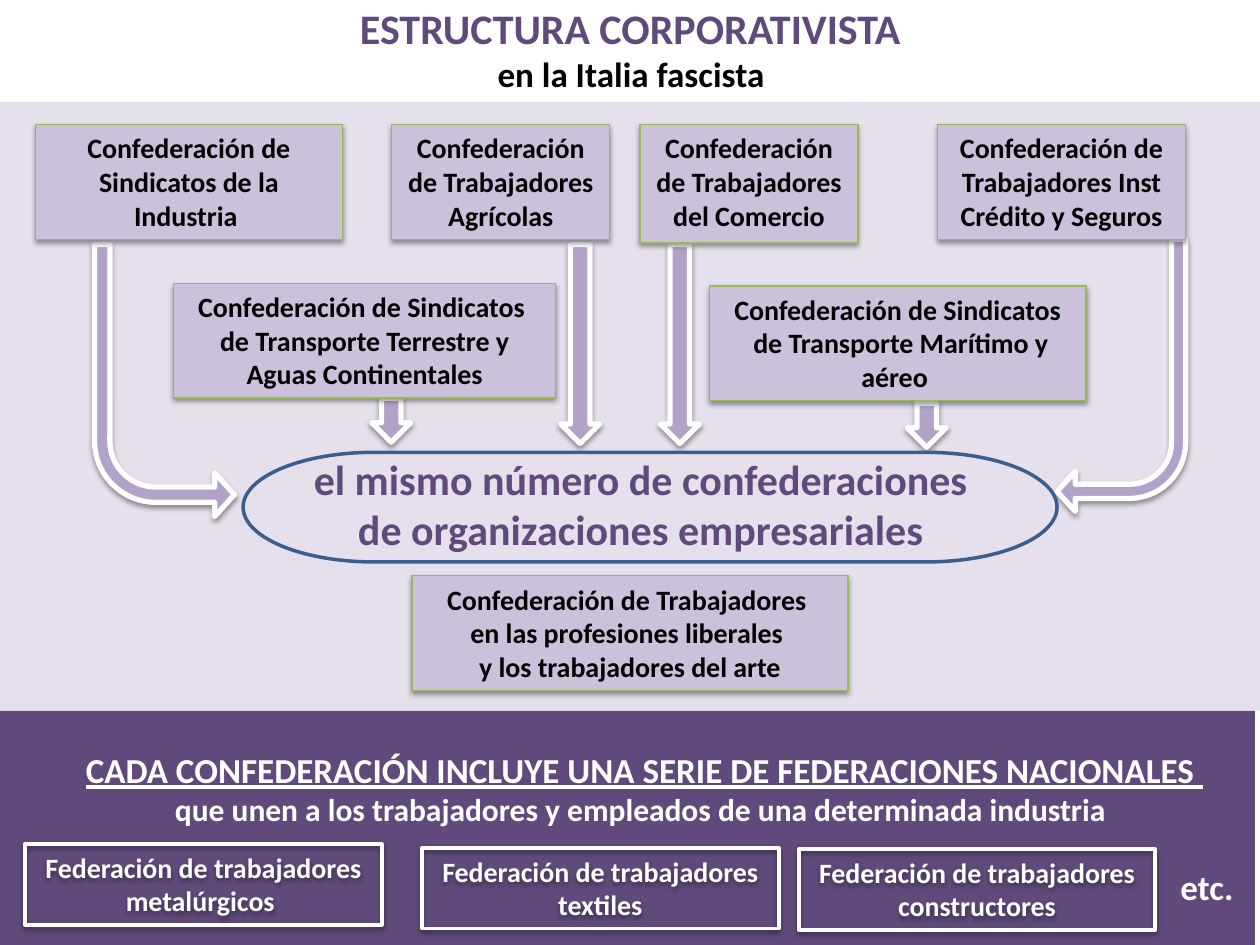
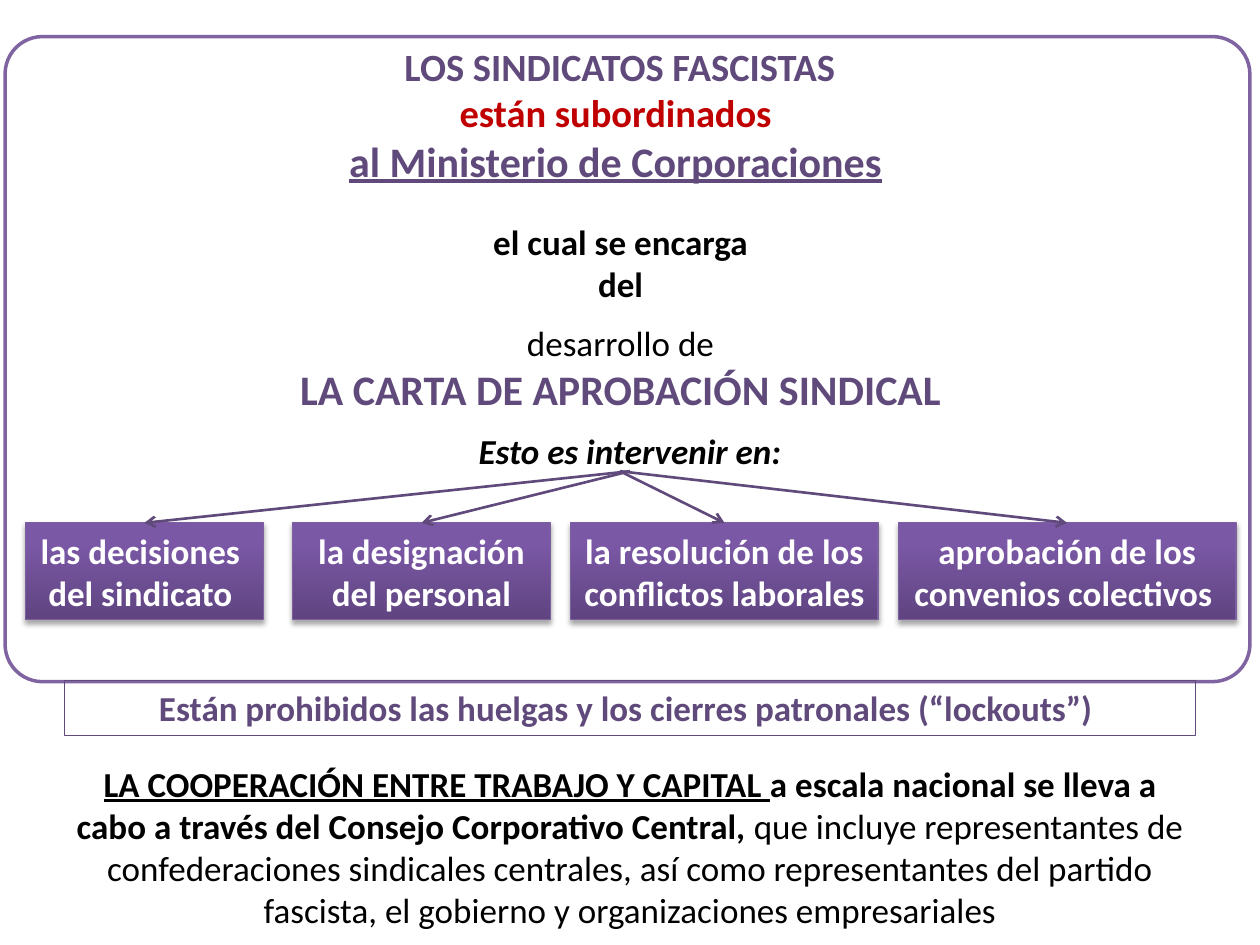
from dataclasses import dataclass
from typing import NamedTuple

from lxml import etree
from pptx import Presentation
from pptx.dml.color import RGBColor
from pptx.enum import shapes, text
from pptx.oxml.ns import qn
from pptx.util import Inches, Pt

FONT = "Calibri"
WHITE = RGBColor(0xFF, 0xFF, 0xFF)
BLACK = RGBColor(0x00, 0x00, 0x00)
RED = RGBColor(0xC0, 0x00, 0x00)
PLUM = RGBColor(0x60, 0x4A, 0x7B)
VIOLET = RGBColor(0x80, 0x64, 0xA2)
MAUVE = RGBColor(0xB3, 0xA2, 0xC7)
LILAC = RGBColor(0xCC, 0xC1, 0xDA)
PALE = RGBColor(0xE6, 0xE0, 0xEC)
GREEN = RGBColor(0x98, 0xB9, 0x55)
BLUE = RGBColor(0x3A, 0x5F, 0x8C)
EDGE = RGBColor(0x7D, 0x60, 0xA0)
DEEP = RGBColor(0x5F, 0x44, 0x80)
LIGHT = RGBColor(0x7B, 0x58, 0xA6)

KIND = shapes.MSO_SHAPE
BENT = (0.11, 0.157, 0.141, 0.438)


class Run(NamedTuple):
    """A stretch of text; None keeps the paragraph's setting."""
    words: str
    size: float | None = None
    color: RGBColor | None = None
    bold: bool | None = None
    under: bool | None = None


class Para(NamedTuple):
    runs: str | list[Run]
    size: float
    color: RGBColor = BLACK
    bold: bool = True
    italic: bool = False
    under: bool = False


class Area(NamedTuple):
    left: float
    top: float
    width: float
    height: float

    def inches(self) -> list[int]:
        return [Inches(side) for side in self]


class Shade(NamedTuple):
    alpha: int
    dist: float


class Blend(NamedTuple):
    low: RGBColor
    high: RGBColor


SOFT = Shade(38, 1.6)
FIRM = Shade(35, 1.8)


@dataclass
class Look:
    """Fill, outline and shadow; a blend runs from bottom to top."""
    fill: RGBColor | Blend | None = None
    line: RGBColor | None = None
    width: float = 0.75
    shade: Shade | None = None


PLAIN = Look()
UNION = Look(LILAC, GREEN, shade=SOFT)
GUILD = Look(None, WHITE, 2.25, SOFT)
TASK = Look(Blend(DEEP, LIGHT), EDGE, shade=FIRM)
ARROW = Look(MAUVE, WHITE, 3, SOFT)


def cast(shape, shade: Shade) -> None:
    """Put a soft shadow straight below the shape."""
    effects = shape._element.spPr.find(qn("a:effectLst"))
    outer = etree.SubElement(
        effects, qn("a:outerShdw"), blurRad=str(Pt(3.1)),
        dist=str(Pt(shade.dist)), dir="5400000", rotWithShape="0")
    tint = etree.SubElement(outer, qn("a:srgbClr"), val=str(BLACK))
    etree.SubElement(tint, qn("a:alpha"), val=str(shade.alpha * 1000))


def dress(shape, look: Look) -> None:
    if look.fill is None:
        shape.fill.background()
    elif isinstance(look.fill, Blend):
        shape.fill.gradient()
        shape.fill.gradient_angle = 90
        for stop, color, place in zip(shape.fill.gradient_stops, look.fill, (0, 0.8)):
            stop.color.rgb = color
            stop.position = place
    else:
        shape.fill.solid()
        shape.fill.fore_color.rgb = look.fill
    if look.line is None:
        shape.line.fill.background()
    else:
        shape.line.color.rgb = look.line
        shape.line.width = Pt(look.width)
    shape.shadow.inherit = False
    if look.shade:
        cast(shape, look.shade)


def form(slide, kind, area: Area, look: Look, adjust=()):
    shape = slide.shapes.add_shape(kind, *area.inches())
    for i, value in enumerate(adjust):
        shape.adjustments[i] = value
    dress(shape, look)
    return shape


def bend(slide, area: Area, flip: bool) -> None:
    """Draw an arrow that comes down and turns left, or right when flipped."""
    shape = form(slide, KIND.BENT_ARROW, area, ARROW, BENT)
    shape.rotation = 180
    if flip:
        shape._element.spPr.find(qn("a:xfrm")).set("flipH", "1")


def write(slide, area: Area, paras: list[Para], look: Look = PLAIN):
    box = slide.shapes.add_textbox(*area.inches())
    dress(box, look)
    frame = box.text_frame
    frame.word_wrap = True
    frame.auto_size = text.MSO_AUTO_SIZE.SHAPE_TO_FIT_TEXT
    for i, para in enumerate(paras):
        line = frame.add_paragraph() if i else frame.paragraphs[0]
        line.alignment = text.PP_ALIGN.CENTER
        font = line.font
        font.name, font.size = FONT, Pt(para.size)
        font.bold, font.italic, font.underline = para.bold, para.italic, para.under
        font.color.rgb = para.color
        runs = [Run(para.runs)] if isinstance(para.runs, str) else para.runs
        for part in runs:
            run = line.add_run()
            run.text = part.words
            if part.size:
                run.font.size = Pt(part.size)
            if part.color is not None:
                run.font.color.rgb = part.color
            if part.bold is not None:
                run.font.bold = part.bold
            if part.under is not None:
                run.font.underline = part.under
    return box


def link(slide, start: float, top: float, box) -> None:
    """Draw an arrow from a point to the middle of the box's top side."""
    line = slide.shapes.add_connector(
        shapes.MSO_CONNECTOR.STRAIGHT, Inches(start), Inches(top), box.left, box.top)
    line.end_connect(box, 0)
    line.line.color.rgb = PLUM
    line.line.width = Pt(1.5)
    etree.SubElement(line.get_or_add_ln(), qn("a:tailEnd"), type="arrow")
    etree.SubElement(line._element.spPr, qn("a:effectLst"))


UNIONS = [
    (Area(0.28, 0.99, 2.44, 0.91), ["Confederación de Sindicatos de la Industria "]),
    (Area(3.11, 0.99, 1.73, 0.91), ["Confederación de Trabajadores Agrícolas"]),
    (Area(5.08, 0.99, 1.73, 0.94), ["Confederación de Trabajadores del Comercio"]),
    (Area(7.44, 0.99, 1.97, 0.91),
     ["Confederación de Trabajadores Inst Crédito y Seguros"]),
    (Area(1.38, 2.25, 3.03, 0.91),
     ["Confederación de Sindicatos ", "de Transporte Terrestre y",
      " Aguas Continentales "]),
    (Area(5.63, 2.27, 2.99, 0.91),
     ["Confederación de Sindicatos", " de Transporte Marítimo y aéreo "]),
    (Area(3.27, 4.57, 3.46, 0.91),
     ["Confederación de Trabajadores ", "en las profesiones liberales ",
      "y los trabajadores del arte"]),
]
DROPS = [(4.45, 1.94, 1.58), (5.24, 1.94, 1.58), (2.95, 3.16, 0.35), (7.2, 3.2, 0.35)]
GUILDS = [(0.2, 6.7, "metalúrgicos "), (3.35, 6.73, "textiles"),
          (6.34, 6.74, "constructores")]
# left, width, start of the arrow, lines
TASKS = [
    (0.2, 1.89, 5, ["las decisiones ", "del sindicato "]),
    (2.32, 2.05, 5, ["la designación del personal"]),
    (4.53, 2.44, 4.92, ["la resolución de los conflictos laborales"]),
    (7.13, 2.68, 4.92, ["aprobación de los convenios colectivos "]),
]


def structure(slide) -> None:
    form(slide, KIND.RECTANGLE, Area(-0.04, 5.64, 10, 1.88), Look(PLUM))
    form(slide, KIND.RECTANGLE, Area(0, 0.81, 10, 4.83), Look(PALE))
    bend(slide, Area(0.75, 1.94, 1.11, 2.16), True)
    bend(slide, Area(8.39, 1.9, 1.02, 2.16), False)
    for left, top, height in DROPS:
        form(slide, KIND.DOWN_ARROW, Area(left, top, 0.31, height), ARROW)
    form(slide, KIND.FLOWCHART_TERMINATOR, Area(1.93, 3.59, 6.46, 0.87),
         Look(PALE, BLUE, 2))
    write(slide, Area(0.59, -0.03, 8.9, 0.84), [
        Para("ESTRUCTURA CORPORATIVISTA ", 24, PLUM),
        Para("en la Italia fascista ", 20)])
    write(slide, Area(1.23, 3.55, 7.71, 0.91), [
        Para("el mismo número de confederaciones", 24, PLUM),
        Para(" de organizaciones empresariales ", 24, PLUM)])
    for area, lines in UNIONS:
        write(slide, area, [Para(line, 16) for line in lines], UNION)
    write(slide, Area(0.35, 5.89, 9.53, 0.74), [
        Para("CADA CONFEDERACIÓN INCLUYE UNA SERIE DE FEDERACIONES NACIONALES ",
             20, WHITE, under=True),
        Para("que unen a los trabajadores y empleados de una determinada industria ",
             18, WHITE)])
    for left, top, trade in GUILDS:
        write(slide, Area(left, top, 2.83, 0.64),
              [Para(f"Federación de trabajadores {trade}", 16, WHITE)], GUILD)
    write(slide, Area(9.26, 6.82, 0.7, 0.44), [Para("etc. ", 20, WHITE)])


def control(slide) -> None:
    form(slide, KIND.ROUNDED_RECTANGLE, Area(0.04, 0.29, 9.88, 5.12),
         Look(WHITE, VIOLET, 2), (0.058,))
    write(slide, Area(0.43, 0.29, 8.98, 1.25), [
        Para(" LOS SINDICATOS FASCISTAS ", 22, PLUM),
        Para("están subordinados ", 22, RED),
        Para([Run("al Ministerio de Corporaciones", under=True),
              Run(" ", 22, BLACK)], 24, PLUM)])
    write(slide, Area(0.51, 5.4, 8.98, 0.44), [
        Para("Están prohibidos las huelgas y los cierres patronales (“lockouts”) ",
             20, PLUM)], Look(None, PLUM))
    write(slide, Area(2.17, 2.5, 5.51, 0.84), [
        Para("desarrollo de", 20, bold=False),
        Para(" LA CARTA DE APROBACIÓN SINDICAL ", 24, PLUM)])
    write(slide, Area(3.43, 1.7, 2.99, 0.77),
          [Para("el cual se encarga", 20), Para("del", 20)])
    write(slide, Area(0.51, 3.36, 8.98, 0.77),
          [Para("Esto es intervenir en:", 20, italic=True)])
    for left, width, start, lines in TASKS:
        box = write(slide, Area(left, 4.15, width, 0.77),
                    [Para(line, 20, WHITE) for line in lines], TASK)
        link(slide, start, 3.74, box)
    write(slide, Area(0.51, 6, 8.98, 1.45), [Para([
        Run("LA COOPERACIÓN ENTRE TRABAJO Y CAPITAL ", bold=True, under=True),
        Run("a escala nacional se lleva a cabo a través del "
            "Consejo Corporativo Central, ", bold=True),
        Run("que incluye representantes de confederaciones sindicales centrales, "
            "así como representantes del partido fascista, el gobierno y "
            "organizaciones empresariales")], 20, bold=False)])


def main() -> None:
    deck = Presentation()
    deck.slide_width, deck.slide_height = Inches(10), Inches(7.5)
    for draw in (structure, control):
        draw(deck.slides.add_slide(deck.slide_layouts[6]))
    deck.save("out.pptx")


if __name__ == "__main__":
    main()
